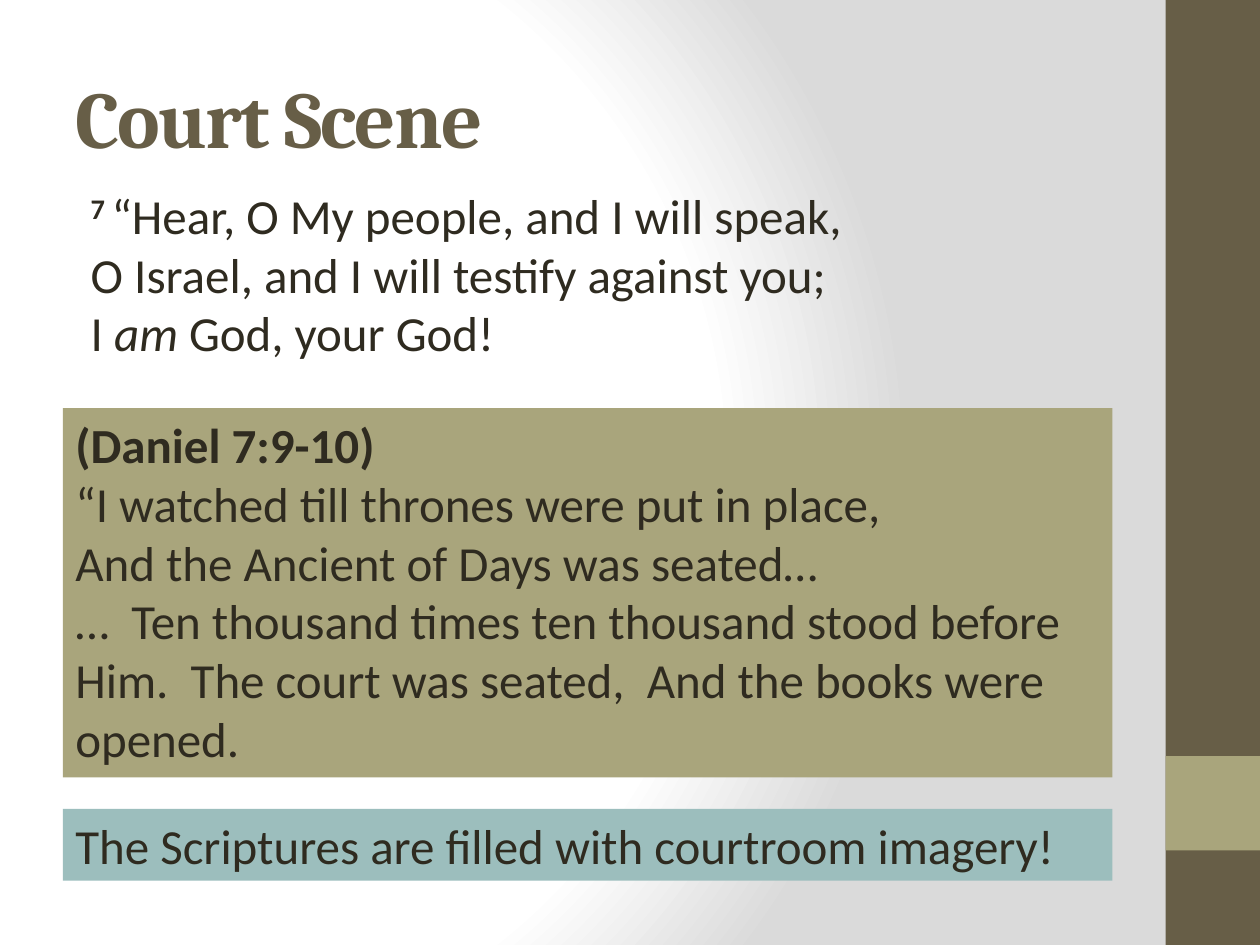
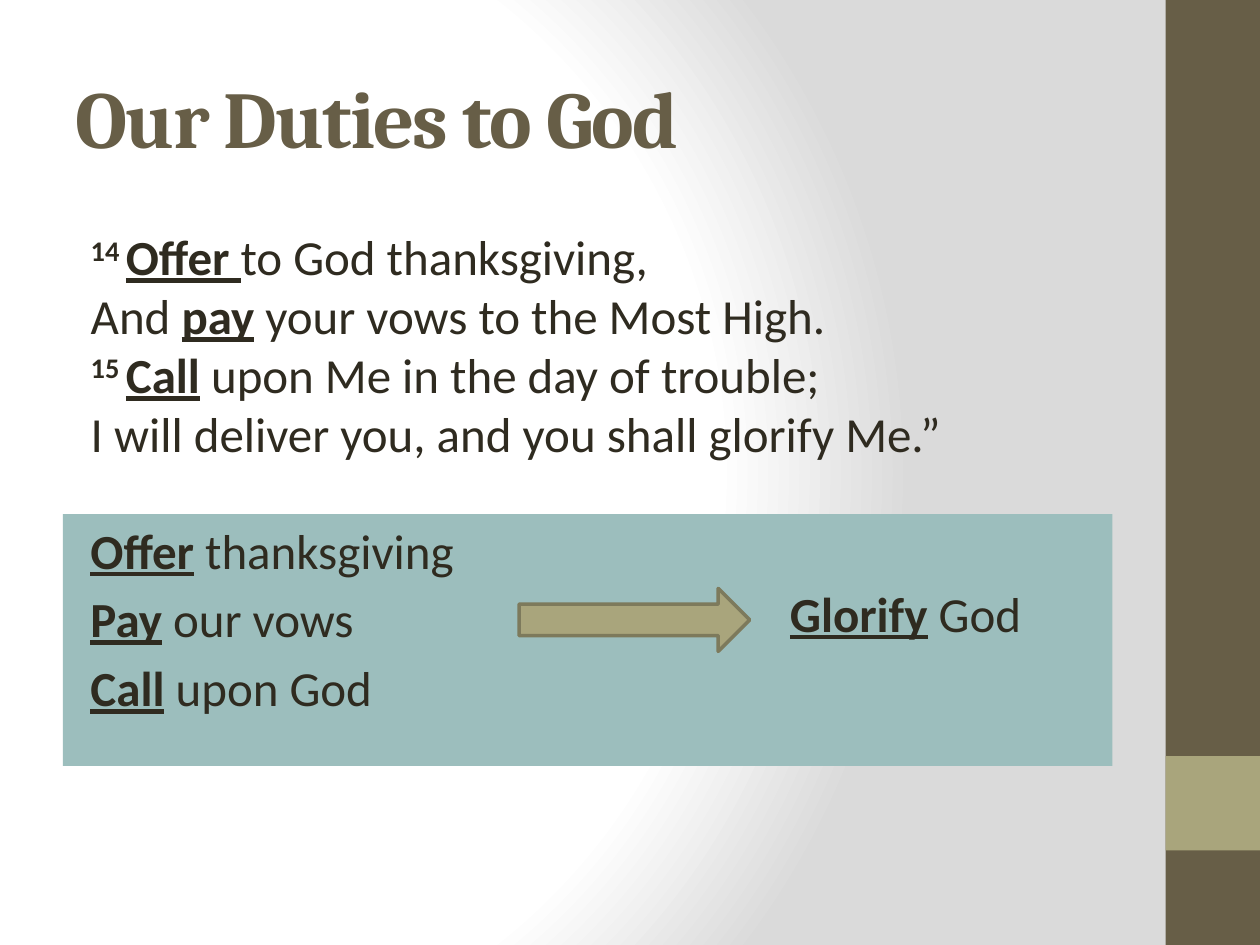
from lxml import etree
from pptx import Presentation
from pptx.dml.color import RGBColor
from pptx.enum.shapes import MSO_SHAPE
from pptx.enum.text import MSO_ANCHOR, MSO_AUTO_SIZE, PP_ALIGN
from pptx.oxml import parse_xml
from pptx.oxml.ns import qn
from pptx.util import Inches, Pt

RECT, ARROW = MSO_SHAPE.RECTANGLE, MSO_SHAPE.RIGHT_ARROW
TOP, MIDDLE = MSO_ANCHOR.TOP, MSO_ANCHOR.MIDDLE
LEFT_ALIGN, NO_FIT = PP_ALIGN.LEFT, MSO_AUTO_SIZE.NONE

BROWN = RGBColor(0x67, 0x5E, 0x47)
OLIVE = RGBColor(0xA9, 0xA5, 0x7C)
OLIVE_EDGE = RGBColor(0x7D, 0x7A, 0x5C)
TEAL = RGBColor(0x9C, 0xBE, 0xBD)
INK = RGBColor(0x2F, 0x2B, 0x20)
HEAD_FONT, TEXT_FONT = "Cambria", "Calibri"
LEFT, WIDTH = 0.5, 8.33
INDENT, GAP = 0.12, 5.6

# Content: a paragraph is a list of (text, style) runs;
# style letters: b bold, i italic, u underline, ^ superscript
COURT_TITLE = "Court Scene"
COURT_VERSE = [[
    ("7 ", "b^"),
    ("“Hear, O My people, and I will speak,\n"
     "O Israel, and I will testify against you;\nI ", ""),
    ("am", "i"), (" God, your God!", ""),
]]
DANIEL = [
    [("(Daniel 7:9-10)", "b")],
    [("“I watched till thrones were put in place,\n"
      "And the Ancient of Days was seated…\n"
      "…  Ten thousand times ten thousand stood before Him.  "
      "The court was seated,  And the books were opened.", "")],
]
IMAGERY = [[("The Scriptures are filled with courtroom imagery!", "")]]

DUTIES_TITLE = "Our Duties to God"
DUTIES_VERSE = [[
    ("14 ", "b^"), ("Offer ", "bu"), ("to God thanksgiving,\nAnd ", ""),
    ("pay", "bu"), (" your vows to the Most High.\n", ""),
    ("15 ", "b^"), ("Call", "bu"),
    (" upon Me in the day of trouble;\n"
     "I will deliver you, and you shall glorify Me.”", ""),
]]
DUTIES = [[(verb, "bu"), (rest, "")] for verb, rest in (
    ("Offer", " thanksgiving"), ("Pay", " our vows"), ("Call", " upon God"))]
GLORIFY = [[("Glorify", "bu"), (" God", "")]]

BACKGROUND = """<a:gradFill rotWithShape="1"
  xmlns:a="http://schemas.openxmlformats.org/drawingml/2006/main"><a:gsLst>
  <a:gs pos="0"><a:srgbClr val="FFFFFF"/></a:gs>
  <a:gs pos="75000"><a:srgbClr val="FFFFFF"/></a:gs>
  <a:gs pos="100000"><a:srgbClr val="DADADA"/></a:gs></a:gsLst>
  <a:path path="circle"><a:fillToRect l="20000" t="50000" r="100000" b="50000"/></a:path>
</a:gradFill>"""


def box(*lengths):
    return [Inches(n) for n in lengths]


def place(sp, *lengths):
    sp.left, sp.top, sp.width, sp.height = box(*lengths)


def add_run(p, text, style="", font=TEXT_FONT, size=28, color=INK):
    r = p.add_run()
    r.text = text
    r.font.name, r.font.size = font, Pt(size)
    r.font.color.rgb = color
    r.font.bold, r.font.italic = "b" in style, "i" in style
    r.font.underline = "u" in style
    if "^" in style:
        r.font._element.set("baseline", "30000")
    return r


def write(tf, paragraphs, indented=False):
    tf.word_wrap, tf.auto_size, tf.vertical_anchor = True, NO_FIT, TOP
    for i, runs in enumerate(paragraphs):
        p = tf.add_paragraph() if i else tf.paragraphs[0]
        p.alignment = LEFT_ALIGN
        p.space_before = Pt(GAP if indented else 0)
        pPr = p._p.get_or_add_pPr()
        pPr.set("marL", str(Inches(INDENT if indented else 0)))
        pPr.set("indent", "0")
        etree.SubElement(pPr, qn("a:buNone"))
        for text, style in runs:
            for n, line in enumerate(text.split("\n")):
                if n:
                    p.add_line_break()
                if line:
                    add_run(p, line, style)


def add_block(shapes, kind, lengths, fill, edge=None):
    sp = shapes.add_shape(kind, *box(*lengths))
    sp.shadow.inherit = False
    sp.fill.solid()
    sp.fill.fore_color.rgb = fill
    if edge is None:
        sp.line.fill.background()
    else:
        sp.line.color.rgb, sp.line.width = edge, Pt(2)
    return sp


def add_slide(prs, title, verse, top, height):
    s = prs.slides.add_slide(prs.slide_layouts[1])
    place(s.shapes.title, LEFT, 0.3, WIDTH, 1.25)
    tf = s.shapes.title.text_frame
    tf.auto_size, tf.vertical_anchor = NO_FIT, MIDDLE
    p = tf.paragraphs[0]
    p.alignment = LEFT_ALIGN
    r = add_run(p, title, "b", HEAD_FONT, 46, BROWN)
    r.font._element.set("spc", "-100")
    body = s.placeholders[1]
    place(body, LEFT, top, WIDTH, height)
    write(body.text_frame, verse, indented=True)
    return s


def dress_master(prs, s):
    """Give the master its gradient and side bands, drawn first on slide s."""
    master = prs.slide_master
    master.background.fill.solid()
    solid = master.element.find(".//" + qn("p:bgPr")).find(qn("a:solidFill"))
    solid.getparent().replace(solid, parse_xml(BACKGROUND))
    bands = [((9.25, 0, 0.75, 7.5), BROWN), ((9.25, 6, 0.75, 0.75), OLIVE)]
    for i, (lengths, fill) in enumerate(bands):
        sp = add_block(s.shapes, RECT, lengths, fill)
        master.shapes.element.insert(2 + i, sp.element)


def main():
    prs = Presentation()
    prs.slide_width, prs.slide_height = box(10, 7.5)

    # Court scene
    s = add_slide(prs, COURT_TITLE, COURT_VERSE, 1.42, 1.67)
    dress_master(prs, s)
    for top, height, fill, text in ((3.24, 2.93, OLIVE, DANIEL),
                                    (6.42, 0.57, TEAL, IMAGERY)):
        sp = add_block(s.shapes, RECT, (LEFT, top, WIDTH, height), fill)
        write(sp.text_frame, text)

    # Duties leading to glory
    s = add_slide(prs, DUTIES_TITLE, DUTIES_VERSE, 1.75, 2.33)
    group = s.shapes.add_group_shape().shapes
    panel = add_block(group, RECT, (LEFT, 4.08, WIDTH, 2), TEAL)
    write(panel.text_frame, DUTIES, indented=True)
    add_block(group, ARROW, (4.12, 4.67, 1.83, 0.5), OLIVE, OLIVE_EDGE)
    result = group.add_textbox(*box(6.17, 4.58, 2.58, 0.57))
    write(result.text_frame, GLORIFY)

    prs.save("out.pptx")


if __name__ == "__main__":
    main()
